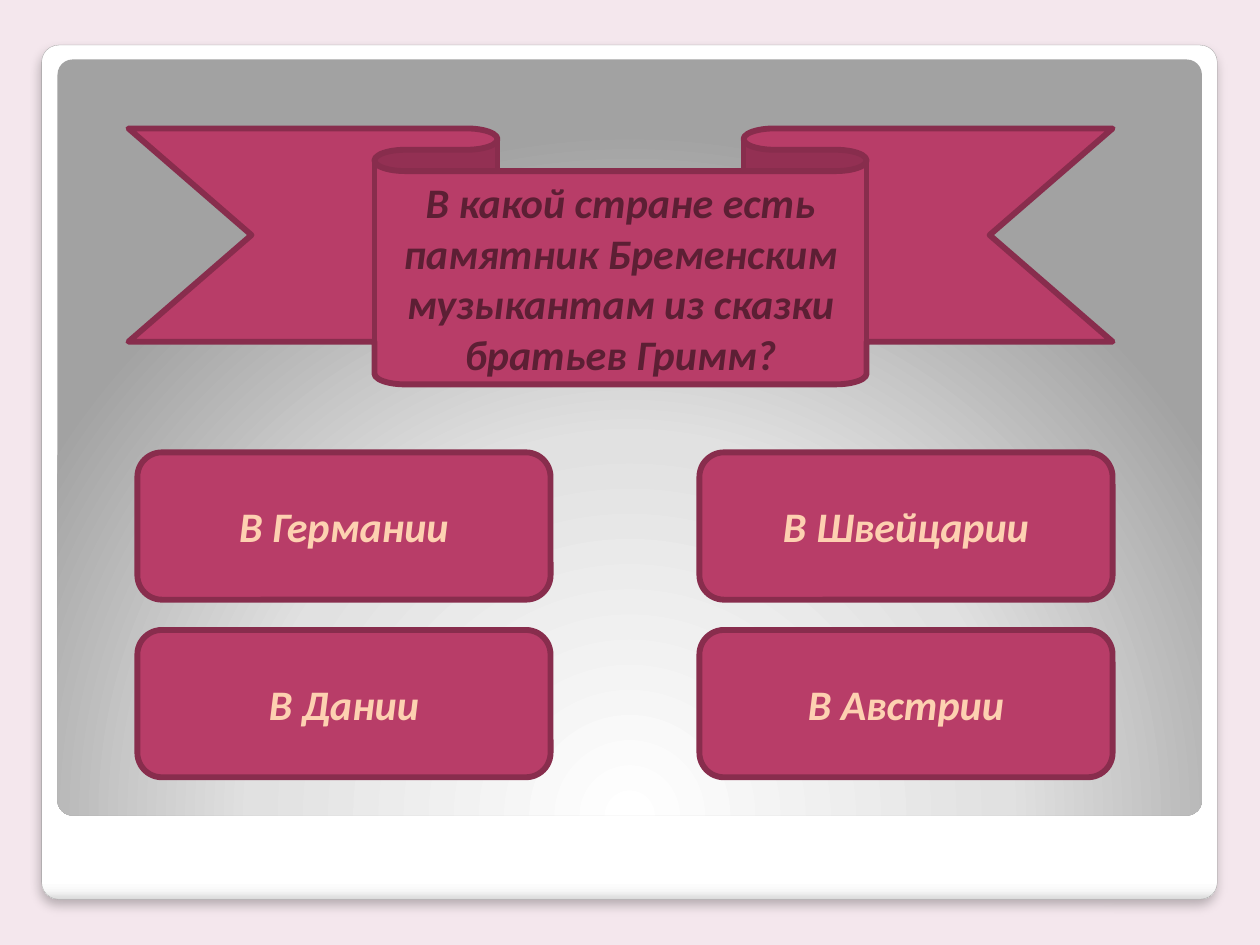
"""Build a quiz slide with a question ribbon and four answer buttons."""
import pptx
import pptx.dml.color
import pptx.enum.shapes
import pptx.enum.text
import pptx.oxml
import pptx.oxml.ns
import pptx.util
from pptx.util import Cm

QUESTION = "В какой стране есть памятник Бременским музыкантам из сказки братьев Гримм?"
ANSWERS = [
    ["В Германии", "В Швейцарии"],
    ["В Дании", "В Австрии"],
]
COLORS = {
    "background": "F4E7ED",
    "frame_line": "A4A4A4",
    "raspberry": "B83D68",
    "raspberry_line": "882D4D",
    "question": "5C1F34",
    "answer": "FDD1B1",
}
FRAME_STOPS = [(0, "FFFFFF"), (98, "FFFFFF"), (99, "F7F7F7"), (100, "DADADA")]
PANEL_STOPS = [(0, "FFFFFF"), (55, "E1E1E1"), (100, "A2A2A2")]
FRAME_SHADE = '<a:lin ang="5400000" scaled="0"/>'
PANEL_SHADE = (
    '<a:path path="circle">'
    '<a:fillToRect l="50000" t="175000" r="50000" b="-75000"/></a:path>'
)
FRAME_SHADOW = (
    '<a:outerShdw {ns} blurRad="76200" dist="50800" dir="5400000" '
    'algn="tl" rotWithShape="0"><a:srgbClr val="000000">'
    '<a:alpha val="25000"/></a:srgbClr></a:outerShdw>'
)
NS = pptx.oxml.ns.nsdecls("a")
RIBBON = pptx.enum.shapes.MSO_SHAPE.DOWN_RIBBON
ROUNDED = pptx.enum.shapes.MSO_SHAPE.ROUNDED_RECTANGLE

BUTTON_LEFT, BUTTON_TOP = 2.77, 9.12
BUTTON_WIDTH, BUTTON_HEIGHT = 8.33, 2.97
COLUMN_STEP, ROW_STEP = 11.33, 3.58


def rgb(name):
    """Return the named colour."""
    return pptx.dml.color.RGBColor.from_string(COLORS[name])


def add_plain(slide, preset, box):
    """Add a preset shape without a shadow, its box given in centimetres."""
    shape = slide.shapes.add_shape(preset, *[Cm(length) for length in box])
    shape.shadow.inherit = False
    return shape


def add_backdrop(slide, box, stops, shade):
    """Add a slightly rounded, borderless panel with a gradient fill."""
    panel = add_plain(slide, ROUNDED, box)
    panel.adjustments[0] = 0.02
    panel.line.fill.background()
    marks = "".join(
        f'<a:gs pos="{place * 1000}"><a:srgbClr val="{color}"/></a:gs>'
        for place, color in stops
    )
    gradient = f'<a:gradFill {NS} rotWithShape="1"><a:gsLst>{marks}</a:gsLst>{shade}</a:gradFill>'
    geometry = panel._element.spPr.find(pptx.oxml.ns.qn("a:prstGeom"))
    geometry.addnext(pptx.oxml.parse_xml(gradient))
    return panel


def write(shape, text, *, color, size=24, font="Calibri", bold=True, italic=True):
    """Write centred, formatted text into a shape."""
    frame = shape.text_frame
    frame.word_wrap = True
    frame.vertical_anchor = pptx.enum.text.MSO_ANCHOR.MIDDLE
    paragraph = frame.paragraphs[0]
    paragraph.alignment = pptx.enum.text.PP_ALIGN.CENTER
    run = paragraph.add_run()
    run.text = text
    run.font.name = font
    run.font.size = pptx.util.Pt(size)
    run.font.bold = bold
    run.font.italic = italic
    run.font.color.rgb = rgb(color)


def add_card(slide, preset, box, text, color):
    """Add a raspberry shape with text."""
    card = add_plain(slide, preset, box)
    card.fill.solid()
    card.fill.fore_color.rgb = rgb("raspberry")
    card.line.color.rgb = rgb("raspberry_line")
    card.line.width = pptx.util.Pt(3.35)
    write(card, text, color=color)


def main():
    """Build and save the slide."""
    deck = pptx.Presentation()
    deck.slide_width, deck.slide_height = Cm(25.4), Cm(19.05)
    slide = deck.slides.add_slide(deck.slide_layouts[6])
    slide.background.fill.solid()
    slide.background.fill.fore_color.rgb = rgb("background")

    frame = add_backdrop(slide, (0.84, 0.91, 23.7, 17.22), FRAME_STOPS, FRAME_SHADE)
    frame.line.color.rgb = rgb("frame_line")
    frame.line.width = pptx.util.Pt(0.16)
    effects = frame._element.spPr.find(pptx.oxml.ns.qn("a:effectLst"))
    effects.append(pptx.oxml.parse_xml(FRAME_SHADOW.format(ns=NS)))
    add_backdrop(slide, (1.16, 1.2, 23.07, 15.24), PANEL_STOPS, PANEL_SHADE)

    add_card(slide, RIBBON, (2.59, 2.59, 19.84, 5.16), QUESTION, "question")
    for row, answers in enumerate(ANSWERS):
        for column, answer in enumerate(answers):
            left = BUTTON_LEFT + column * COLUMN_STEP
            top = BUTTON_TOP + row * ROW_STEP
            add_card(slide, ROUNDED, (left, top, BUTTON_WIDTH, BUTTON_HEIGHT), answer, "answer")

    deck.save("out.pptx")


if __name__ == "__main__":
    main()
